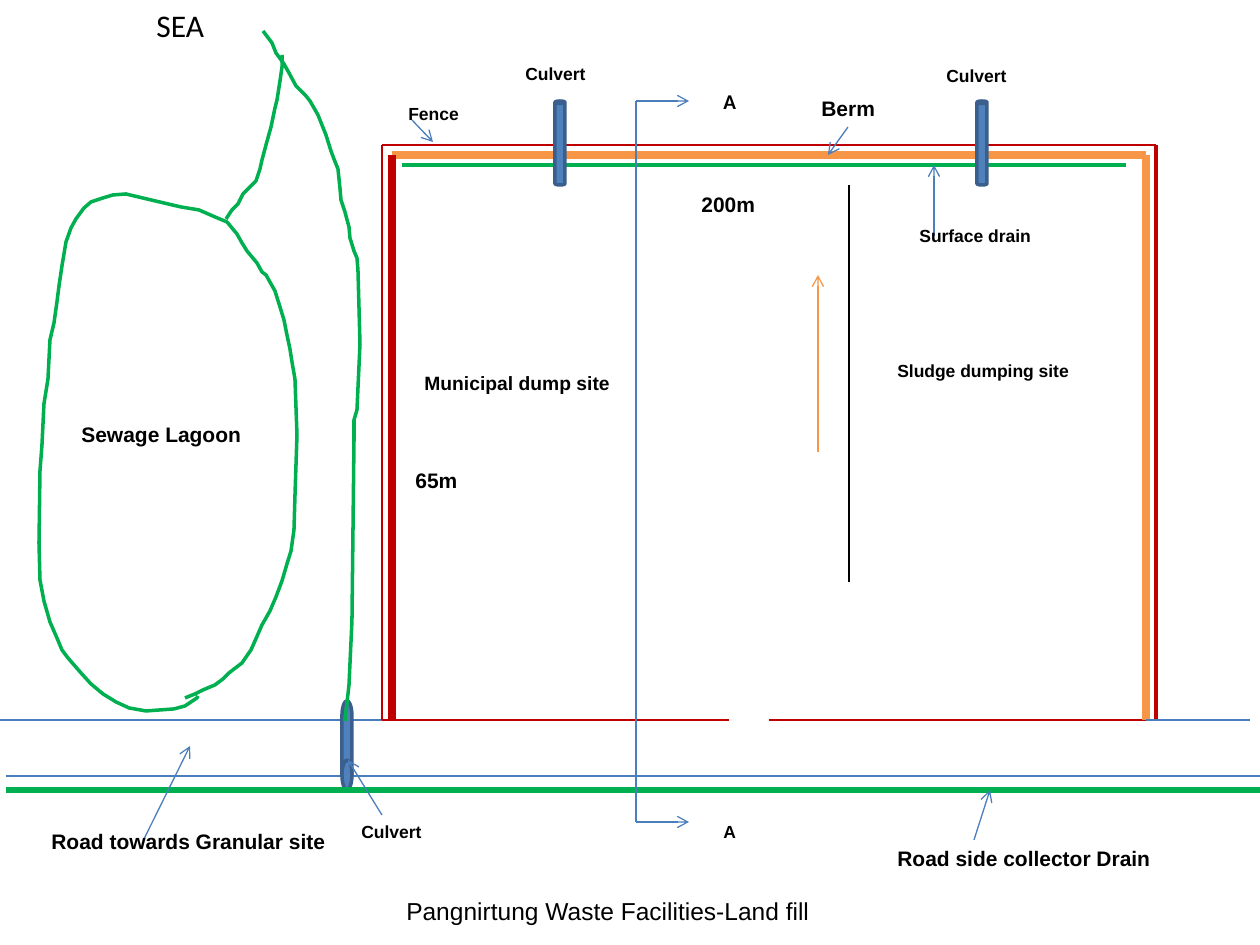
import pptx
import pptx.dml.color
import pptx.enum.shapes
import pptx.enum.text
import pptx.oxml.ns
import pptx.util
from lxml import etree

SCALE = 914400 / 126
BLUE, RED, ORANGE, GREEN, BLACK = "4B7EBC", "C00000", "F79646", "00B050", "000000"
CAN_FILL, CAN_EDGE = "4F81BD", "3A5F8C"
SHAPES = pptx.enum.shapes.MSO_SHAPE
TOP, ROAD_TOP, ROAD_EDGE, DRAIN = 145, 720, 776, 790
FENCE_LEFT, FENCE_RIGHT = 382, 1156
BERM_TOP, BERM_LEFT, BERM_RIGHT = 155, 392, 1146
SECTION_X, SECTION_TOP, SECTION_BOTTOM = 636, 101, 822

# x1, y1, x2, y2, colour, width in points
SITE_LINES = [
    (FENCE_LEFT, ROAD_TOP, 0, ROAD_TOP, BLUE, 1.5),
    (FENCE_LEFT, TOP, FENCE_RIGHT, TOP, RED, 1.5),
    (FENCE_LEFT, TOP, FENCE_LEFT, ROAD_TOP, RED, 1.5),
    (FENCE_RIGHT, TOP, FENCE_RIGHT, ROAD_TOP, RED, 2.25),
    (FENCE_LEFT, ROAD_TOP, 729, ROAD_TOP, RED, 1.5),
    (769, ROAD_TOP, FENCE_RIGHT, ROAD_TOP, RED, 1.5),
    (BERM_LEFT, BERM_TOP, BERM_RIGHT, BERM_TOP, ORANGE, 4.5),
    (BERM_LEFT, BERM_TOP, BERM_LEFT, ROAD_TOP, RED, 4.5),
    (BERM_RIGHT, BERM_TOP, BERM_RIGHT, ROAD_TOP, ORANGE, 4.5),
    (402, 165, 1126, 165, GREEN, 2.25),
    (6, ROAD_EDGE, 1266, ROAD_EDGE, BLUE, 1.5),
    (BERM_RIGHT, ROAD_TOP, 1250, ROAD_TOP, BLUE, 1.5),
]
DIVIDERS = [
    (849, 582, 849, 185, BLACK, 0.75),
    (SECTION_X, SECTION_TOP, SECTION_X, SECTION_BOTTOM, BLUE, 0.75),
]
ARROWS = [
    (974, 840, 990, 790, BLUE),
    (144, 839, 190, 746, BLUE),
    (SECTION_X, SECTION_BOTTOM, 689, SECTION_BOTTOM, BLUE),
    (SECTION_X, SECTION_TOP, 689, SECTION_TOP, BLUE),
    (382, 815, 348, 760, BLUE),
    (412, 120, 433, 142, BLUE),
    (848, 127, 828, 155, BLUE),
    (934, 236, 934, 165, BLUE),
    (818, 452, 818, 275, ORANGE),
]
# text, left, top, width, height, size
LABELS = [
    ("Sewage Lagoon", 69, 415, 188, 38, 12),
    ("Road side collector Drain", 885, 839, 281, 38, 12),
    ("Road towards Granular site", 39, 822, 302, 38, 12),
    ("Culvert", 513, 57, 86, 34, 10),
    ("Culvert", 934, 59, 86, 34, 10),
    ("Culvert", 349, 815, 86, 34, 10),
    ("A", 711, 815, 38, 34, 10),
    ("Fence", 396, 97, 77, 34, 10),
    ("Berm", 809, 89, 79, 38, 12),
    ("Surface drain", 907, 219, 142, 34, 10),
    ("200m", 689, 185, 79, 38, 12),
    ("65m", 403, 461, 68, 38, 12),
]
LAGOON = [
    (185, 698), (195, 694), (203, 690), (215, 685), (223, 679), (229, 673),
    (242, 663), (251, 650), (255, 641), (262, 625), (270, 611), (276, 597),
    (282, 581), (287, 564), (291, 551), (294, 530), (295, 496), (297, 435),
    (295, 379), (292, 362), (290, 349), (287, 335), (284, 320), (280, 307),
    (275, 291), (266, 275), (262, 272), (257, 263), (252, 257), (247, 251),
    (242, 243), (237, 234), (227, 222), (215, 217), (199, 210), (181, 207),
    (168, 204), (151, 200), (130, 195), (126, 194), (113, 195), (103, 198),
    (91, 202), (84, 208), (76, 219), (71, 228), (66, 242), (62, 266),
    (59, 286), (57, 302), (54, 323), (50, 340), (48, 379), (44, 404),
    (42, 445), (40, 471), (39, 543), (40, 580), (44, 601), (50, 622),
    (57, 638), (62, 650), (68, 658), (81, 673), (91, 684), (103, 694),
    (116, 702), (129, 708), (146, 711), (174, 709), (185, 706), (197, 698),
    (198, 696),
]
STREAM = [
    (345, 721), (349, 685), (352, 621), (354, 441), (354, 420), (357, 410),
    (360, 344), (358, 270), (357, 258), (354, 251), (350, 238), (349, 227),
    (345, 212), (341, 200), (340, 188), (338, 169), (334, 159), (331, 151),
    (326, 135), (318, 115), (310, 101), (306, 96), (296, 86), (289, 73),
    (284, 64), (276, 53), (272, 43), (266, 35), (263, 31),
]
LAGOON_OUTLET = [
    (226, 219), (232, 210), (238, 204), (243, 194), (249, 188), (256, 181),
    (260, 169), (262, 160), (266, 145), (271, 127), (275, 108), (277, 100),
    (280, 81), (282, 67), (282, 55),
]


def px(n):
    return pptx.util.Emu(round(n * SCALE))


def rgb(color):
    return pptx.dml.color.RGBColor.from_string(color)


def set_line(sp, color, width):
    sp.line.color.rgb = rgb(color)
    sp.line.width = pptx.util.Pt(width)


def add_line(s, x1, y1, x2, y2, color, width=0.75, arrow=False):
    kind = pptx.enum.shapes.MSO_CONNECTOR.STRAIGHT
    sp = s.shapes.add_connector(kind, px(x1), px(y1), px(x2), px(y2))
    set_line(sp, color, width)
    qn = pptx.oxml.ns.qn
    if arrow:
        etree.SubElement(sp.line._get_or_add_ln(), qn("a:tailEnd"), type="arrow")
    etree.SubElement(sp.element.spPr, qn("a:effectLst"))


def add_culvert(s, x, y, w, h, kind=SHAPES.CAN):
    sp = s.shapes.add_shape(kind, px(x), px(y), px(w), px(h))
    sp.shadow.inherit = False
    sp.fill.solid()
    sp.fill.fore_color.rgb = rgb(CAN_FILL)
    set_line(sp, CAN_EDGE, 2)
    return sp


def add_watercourse(s, points):
    """Draw an open green outline through the points."""
    builder = s.shapes.build_freeform(*points[0], scale=SCALE)
    builder.add_line_segments(points[1:], close=False)
    sp = builder.convert_to_shape()
    sp.shadow.inherit = False
    sp.fill.background()
    set_line(sp, GREEN, 2)


def add_text(s, text, x, y, w, h, size, font="Arial", bold=True, wrap=False):
    sp = s.shapes.add_textbox(px(x), px(y), px(w), px(h))
    tf = sp.text_frame
    tf.word_wrap = wrap
    p = tf.paragraphs[0]
    r = p.add_run()
    r.text = text
    r.font.name = font
    r.font.size = pptx.util.Pt(size)
    r.font.bold = bold
    r.font.color.rgb = rgb(BLACK)
    return tf


def main():
    prs = pptx.Presentation()
    prs.slide_width, prs.slide_height = px(1260), px(945)
    s = prs.slides.add_slide(prs.slide_layouts[6])

    tf = add_text(s, "Pangnirtung Waste Facilities-Land fill",
                  210, 876, 796, 69, 14, bold=False, wrap=True)
    tf.vertical_anchor = pptx.enum.text.MSO_ANCHOR.MIDDLE
    tf.paragraphs[0].alignment = pptx.enum.text.PP_ALIGN.CENTER

    for line in SITE_LINES:
        add_line(s, *line)
    for x in (977, 555):
        add_culvert(s, x, 101, 10, 84)
    road_culvert = add_culvert(s, 342, 701, 10, 89, SHAPES.FLOWCHART_MAGNETIC_DISK)
    road_culvert.element.spPr.xfrm.set("flipV", "1")
    add_line(s, 6, DRAIN, 1260, DRAIN, GREEN, 4.5 - 1.5)
    for points in (LAGOON, STREAM, LAGOON_OUTLET):
        add_watercourse(s, points)

    for line in DIVIDERS:
        add_line(s, *line)
    for arrow in ARROWS:
        add_line(s, *arrow, arrow=True)
    for label in LABELS:
        add_text(s, *label)
    add_text(s, "Sludge dumping site", 885, 354, 242, 34, 10, wrap=True)
    add_text(s, "Municipal dump site", 412, 365, 236, 37, 11, wrap=True)
    add_text(s, "SEA", 144, 0, 73, 50, 18, font="Calibri", bold=False)
    add_text(s, "A", 711, 82, 38, 38, 12, font="Calibri")
    prs.save("out.pptx")


if __name__ == "__main__":
    main()
